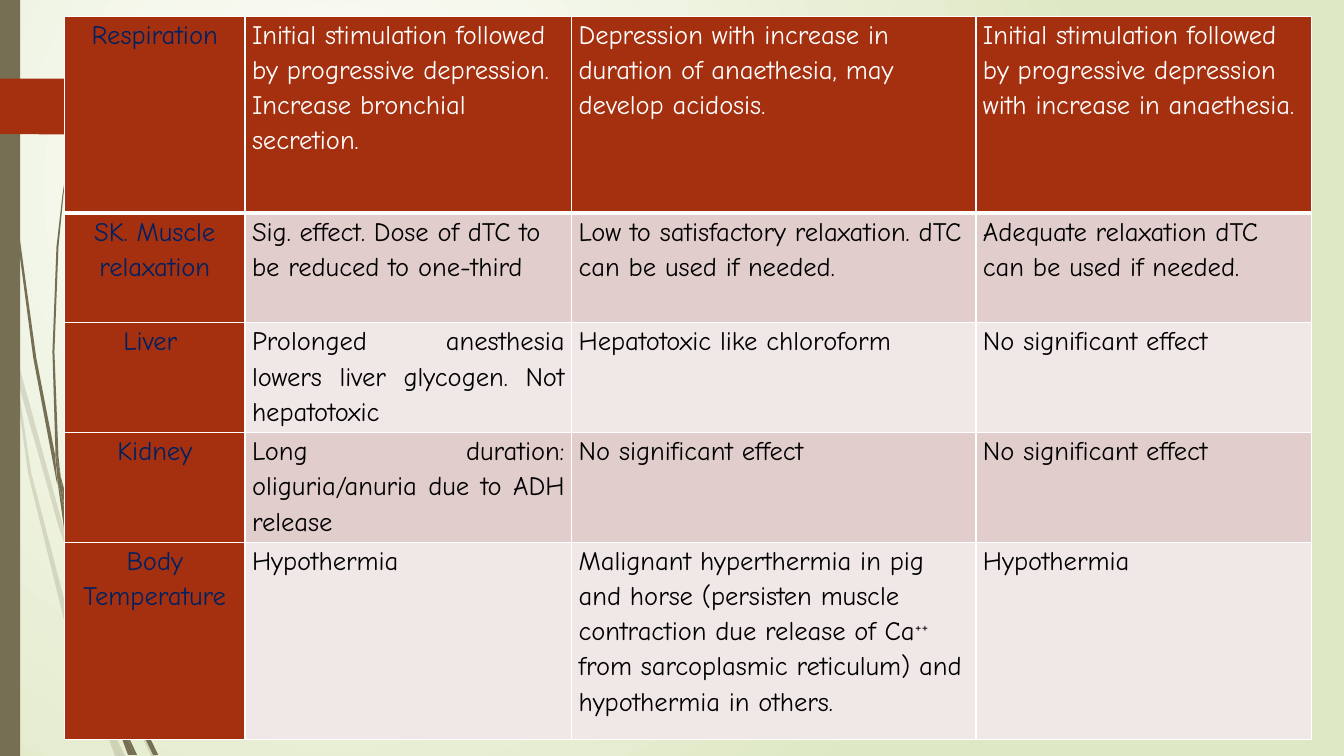
from dataclasses import dataclass

from lxml import etree
from pptx import Presentation
from pptx.dml.color import RGBColor
from pptx.enum.shapes import MSO_SHAPE
from pptx.enum.text import PP_ALIGN
from pptx.oxml import parse_xml
from pptx.oxml.ns import qn
from pptx.util import Inches, Pt

RECT = MSO_SHAPE.RECTANGLE
LEFT, MID, JUST = PP_ALIGN.LEFT, PP_ALIGN.CENTER, PP_ALIGN.JUSTIFY
NS = 'xmlns:a="http://schemas.openxmlformats.org/drawingml/2006/main"'


@dataclass(frozen=True)
class Theme:
    font: str = "Comic Neue"
    size: float = 19
    rust: str = "A53010"
    olive: str = "766F54"
    navy: str = "002060"
    black: str = "000000"
    white: str = "FFFFFF"
    rose: str = "E1CDCC"
    pale: str = "F0E8E7"
    lime: str = "DFE8C4"


T = Theme()

# Blades of grass: x, y pairs along each outline, in inches
FAINT = [
    [.11, 3.5, .09, 3.22, 0, 2.82, 0, 2.99, .1, 3.44],
    [.58, 5.22, .84, 5.99, .85, 5.86, .62, 5.2, .14, 3.45, .17, 3.76],
    [.92, 6.07, .88, 5.96, .88, 6.1, 1.23, 6.94, 1.5, 7.5, 1.55, 7.5, 1.27, 6.92],
    [1.19, 7.5, 1.24, 7.5, 1.05, 7.11],
    [.93, 6.83, .7, 6.19, .31, 4.69, .17, 3.76, .11, 3.5, .28, 4.7, .65, 6.21,
     .92, 6.93, 1.01, 7.14, .99, 7.07],
    [.84, 5.99, .87, 6.46, .93, 6.83, .96, 6.92, 1.05, 7.11, 1.03, 7.06,
     .91, 6.46, .88, 6.1, .88, 6.08],
    [.88, 5.84, 1.1, 4.62, 1.6, 3.49, 2.29, 2.45, 2.68, 1.98, 2.9, 1.75,
     3.12, 1.54, 3.12, 1.53, 2.89, 1.75, 2.68, 1.97, 2.28, 2.44, 1.58, 3.48,
     1.07, 4.61, .85, 5.84, .85, 5.86, .88, 5.96],
    [1.01, 7.14, 1.14, 7.5, 1.19, 7.5],
    [.88, 6.08, .88, 6.1, .88, 5.96, .85, 5.86, .84, 5.99],
    [.96, 6.92, .93, 6.83, .99, 7.07, 1.01, 7.14, 1.19, 7.5, 1.05, 7.11],
]
BOLD = [
    [.07, 1.1, .17, 2.33, .33, 3.55, .56, 4.77, .57, 4.81, .55, 4.57, .55, 4.53,
     .36, 3.55, .19, 2.32, .08, 1.09, .05, .48, .04, 0, .03, 0, .04, .48],
    [.88, 5.92, 1.06, 6.45, 1.06, 6.31, .93, 5.9, .6, 4.72, .64, 5.05],
    [1.13, 6.49, 1.1, 6.41, 1.11, 6.56, 1.32, 7.08, 1.52, 7.49, 1.57, 7.49,
     1.36, 7.06],
    [1.1, 6.91, .98, 6.57, .72, 5.56, .64, 5.05, .57, 4.77, .68, 5.57, .93, 6.59,
     1.11, 7.08, 1.17, 7.22, 1.16, 7.17],
    [.6, 4.72, .58, 4.53, .54, 3.49, .58, 2.45, .63, 1.93, .7, 1.41, .62, 1.93,
     .56, 2.45, .52, 3.49, .55, 4.49],
    [1.33, 7.49, 1.36, 7.49, 1.22, 7.19],
    [.57, 4.77, .64, 5.05, .6, 4.72, .55, 4.49, .55, 4.53],
    [1.11, 6.33, 1.25, 5.52, 1.58, 4.76, 2.05, 4.06, 2.31, 3.74, 2.45, 3.59,
     2.61, 3.44, 2.6, 3.44, 2.45, 3.58, 2.31, 3.73, 2.04, 4.05, 1.56, 4.74,
     1.22, 5.51, 1.06, 6.31, 1.1, 6.41],
    [1.17, 7.22, 1.27, 7.49, 1.31, 7.49],
    [1.06, 6.45, 1.1, 6.91, 1.16, 7.06, 1.22, 7.19, 1.21, 7.16, 1.11, 6.56,
     1.09, 6.51],
    [1.06, 6.45, 1.09, 6.51, 1.11, 6.56, 1.1, 6.41, 1.06, 6.31],
    [1.16, 7.06, 1.1, 6.91, 1.16, 7.17, 1.17, 7.22, 1.3, 7.49, 1.33, 7.49,
     1.22, 7.19],
]
TAG = [0, 0, 0, .55, 1.46, .56, 1.48, .55, 1.73, .3, 1.74, .28, 1.73, .26,
       1.48, .01, 1.46, 0]

# Text between carets is superscript
ROWS = [
    ["Respiration",
     "Initial stimulation followed by progressive depression. Increase bronchial secretion.",
     "Depression with increase in duration of anaethesia, may develop acidosis.",
     "Initial stimulation followed by progressive depression with increase in anaethesia."],
    ["SK. Muscle relaxation",
     "Sig. effect. Dose of dTC to be reduced to one-third",
     "Low to satisfactory relaxation. dTC can be used if needed.",
     "Adequate relaxation dTC can be used if needed."],
    ["Liver ",
     "Prolonged anesthesia lowers liver glycogen. Not hepatotoxic",
     "Hepatotoxic like chloroform ",
     "No significant effect"],
    ["Kidney",
     "Long duration: oliguria/anuria due to ADH release",
     "No significant effect",
     "No significant effect"],
    ["Body Temperature",
     "Hypothermia ",
     "Malignant hyperthermia in pig and horse (persisten muscle contraction due "
     "release of Ca^++^ from sarcoplasmic reticulum) and hypothermia in others.",
     "Hypothermia"],
]
WIDTHS = [1.79, 3.24, 4.01, 3.33]
HEIGHTS = [1.95, 1.09, 1.09, 1.09, 1.96]


def paint(shape, color):
    shape.shadow.inherit = False
    shape.fill.solid()
    shape.fill.fore_color.rgb = RGBColor.from_string(color)
    shape.line.fill.background()


def outline(shapes, x, y, flat, color):
    pts = [(Inches(x + a), Inches(y + b)) for a, b in zip(flat[::2], flat[1::2])]
    pen = shapes.build_freeform(*pts[0])
    pen.add_line_segments(pts[1:])
    shape = pen.convert_to_shape()
    paint(shape, color)
    return shape


def backdrop(slide):
    slide.background.fill.solid()
    flat = slide.element.find(".//" + qn("p:bgPr")).find(qn("a:solidFill"))
    flat.getparent().replace(flat, parse_xml(
        f'<a:gradFill {NS} rotWithShape="1"><a:gsLst>'
        f'<a:gs pos="0"><a:srgbClr val="{T.white}"/></a:gs>'
        f'<a:gs pos="100000"><a:srgbClr val="{T.lime}"/></a:gs></a:gsLst>'
        '<a:path path="circle"><a:fillToRect l="50000" t="50000" r="100000" '
        'b="100000"/></a:path></a:gradFill>'))


def grass(slide, x, y, blades, alpha):
    group = slide.shapes.add_group_shape()
    for flat in blades:
        blade = outline(group.shapes, x, y, flat, T.olive)
        if alpha < 100:
            tint = blade.fill._xPr.find(qn("a:solidFill"))[0]
            etree.SubElement(tint, qn("a:alpha")).set("val", str(alpha * 1000))


def edge(slide, x, y, w, h):
    bar = slide.shapes.add_shape(RECT, Inches(x), Inches(y), Inches(w), Inches(h))
    paint(bar, T.olive)
    outline(slide.shapes, x, y + .78, TAG, T.rust)


def frame(cell, base):
    props = cell._tc.get_or_add_tcPr()
    for i, (side, width) in enumerate(zip("LRTB", (1, 1, 1, base))):
        props.insert(i, parse_xml(
            f'<a:ln{side} {NS} w="{Pt(width)}"><a:solidFill>'
            f'<a:srgbClr val="{T.white}"/></a:solidFill></a:ln{side}>'))


def write(cell, text, color, align):
    cell.margin_left = cell.margin_right = Inches(.07)
    cell.margin_top = cell.margin_bottom = 0
    para = cell.text_frame.paragraphs[0]
    para.alignment, para.line_spacing, para.space_after = align, 1.15, Pt(10)
    for i, part in enumerate(text.split("^")):
        run = para.add_run()
        run.text = part
        run.font.name, run.font.size = T.font, Pt(T.size)
        run.font.color.rgb = RGBColor.from_string(color)
        if i % 2:
            run.font._element.set("baseline", "30000")


def effects(slide, x, y, w, h):
    table = slide.shapes.add_table(len(ROWS), len(WIDTHS), Inches(x), Inches(y),
                                   Inches(w), Inches(h)).table
    table.first_row = table.horz_banding = False
    for col, width in zip(table.columns, WIDTHS):
        col.width = Inches(width)
    for r, (row, height) in enumerate(zip(ROWS, HEIGHTS)):
        table.rows[r].height = Inches(height)
        for c, text in enumerate(row):
            cell = table.cell(r, c)
            fill = T.rust if r == 0 or c == 0 else T.rose if r % 2 else T.pale
            color = T.navy if c == 0 else T.white if r == 0 else T.black
            align = MID if c == 0 else LEFT if r < 2 or "^" in text else JUST
            cell.fill.solid()
            cell.fill.fore_color.rgb = RGBColor.from_string(fill)
            frame(cell, 1 if r else 3)
            write(cell, text, color, align)


def main():
    deck = Presentation()
    deck.slide_width, deck.slide_height = Inches(13.33), Inches(7.5)
    slide = deck.slides.add_slide(deck.slide_layouts[6])
    backdrop(slide)
    grass(slide, 0, 0, FAINT, 20)
    grass(slide, 0, 0, BOLD, 100)
    edge(slide, 0, 0, .2, 7.5)
    effects(slide, .64, .16, sum(WIDTHS), sum(HEIGHTS))
    deck.save("out.pptx")


if __name__ == "__main__":
    main()
